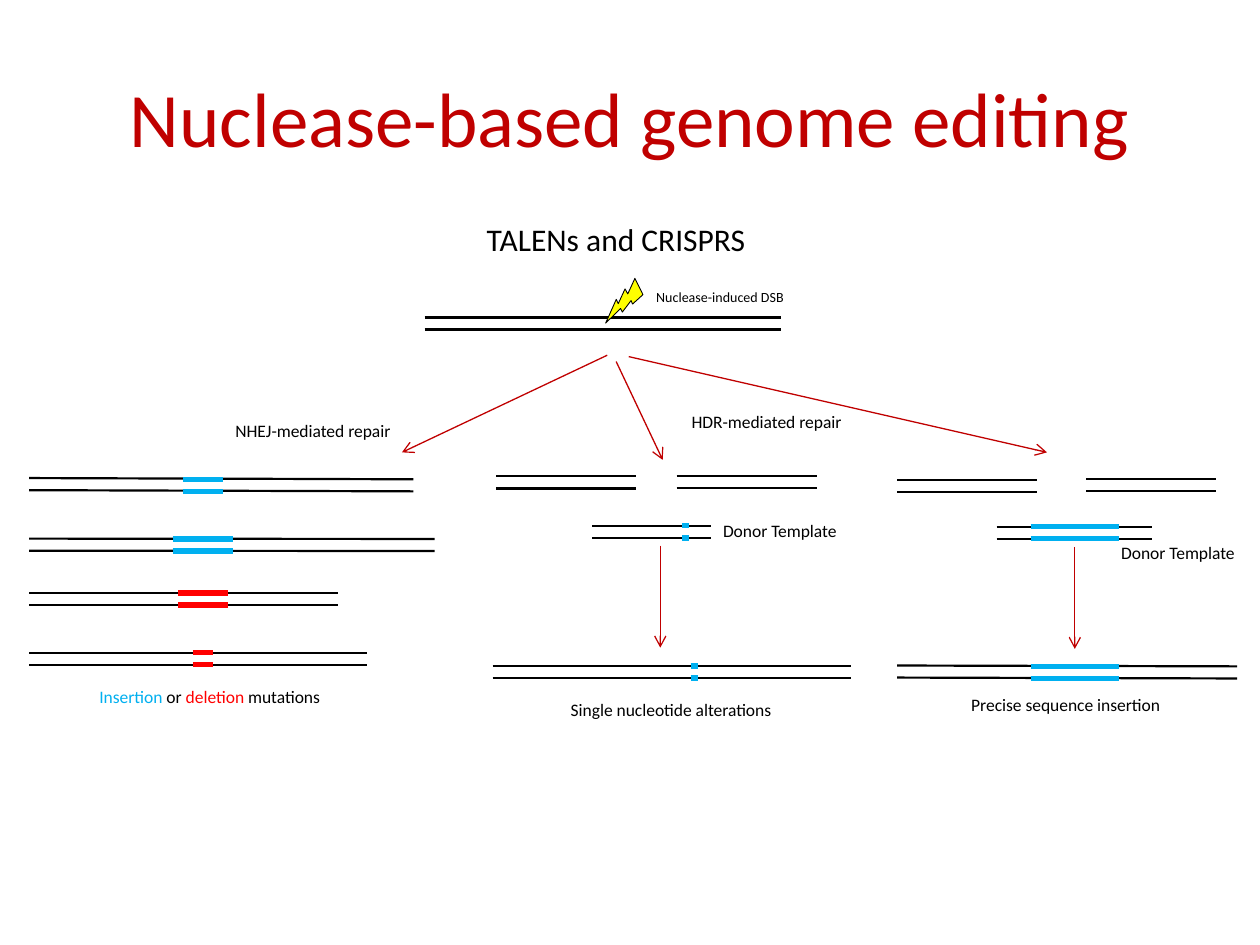
from lxml import etree
from pptx import Presentation
from pptx.dml.color import RGBColor
from pptx.enum.shapes import MSO_CONNECTOR, MSO_SHAPE
from pptx.enum.text import MSO_ANCHOR, PP_ALIGN
from pptx.oxml.ns import qn
from pptx.util import Pt

STRAIGHT = MSO_CONNECTOR.STRAIGHT
BOLT = MSO_SHAPE.LIGHTNING_BOLT
MIDDLE = MSO_ANCHOR.MIDDLE
CENTER = PP_ALIGN.CENTER

BLACK = RGBColor(0x00, 0x00, 0x00)
DARK_RED = RGBColor(0xC0, 0x00, 0x00)
RED = RGBColor(0xFF, 0x00, 0x00)
BLUE = RGBColor(0x00, 0xB0, 0xF0)
YELLOW = RGBColor(0xFF, 0xFF, 0x00)
FONT = "Calibri"
STRAND_GAP = 6.9

prs = Presentation()
prs.slide_width, prs.slide_height = Pt(720), Pt(540)
s = prs.slides.add_slide(prs.slide_layouts[5])


def add_line(x1, y1, x2, y2, color, width, arrow=False):
    c = s.shapes.add_connector(STRAIGHT, Pt(x1), Pt(y1), Pt(x2), Pt(y2))
    c.line.color.rgb = color
    c.line.width = Pt(width)
    if arrow:
        tail = etree.SubElement(c.line._get_or_add_ln(), qn("a:tailEnd"))
        tail.set("type", "arrow")
    etree.SubElement(c._element.spPr, qn("a:effectLst"))


def add_runs(p, runs, size):
    for text, color in runs:
        r = p.add_run()
        r.text = text
        r.font.name = FONT
        r.font.size = Pt(size)
        r.font.color.rgb = color


# Title
title = s.shapes.title
title.left, title.top, title.width, title.height = Pt(36), Pt(21.6), Pt(648), Pt(90)
title.text_frame.vertical_anchor = MIDDLE
p = title.text_frame.paragraphs[0]
p.alignment = CENTER
add_runs(p, [("Nuclease-based genome editing", DARK_RED)], 44)

# Double strands: left, right, top, drop at the right end, then the edited part
strands = [
    (242.6, 446.4, 181.4, 0, None),
    # NHEJ: insertions and deletions
    (16.6, 236.2, 273.2, 0.7, (104.4, 127.4, BLUE)),
    (16.6, 248.4, 307.8, 0.2, (98.6, 133.2, BLUE)),
    (16.6, 193, 338.8, 0, (101.9, 130.3, RED)),
    (16.6, 209.5, 373, 0, (110.2, 121.7, RED)),
    # HDR: single nucleotide
    (283.7, 363.6, 272.2, 0, None),
    (386.6, 466.6, 272, 0, None),
    (338.4, 406.1, 300.5, 0, (390, 393.9, BLUE)),
    (281.5, 486, 380.6, 0, (394.6, 398.9, BLUE)),
    # HDR: sequence insertion
    (512.6, 592.6, 274.1, 0, None),
    (620.6, 694.8, 273.8, 0, None),
    (569.5, 658.1, 301, 0, (589, 639.4, BLUE)),
    (512.6, 707, 380.3, 0.5, (589, 639.4, BLUE)),
]
for left, right, top, drop, edit in strands:
    for y in (top, top + STRAND_GAP):
        add_line(left, y, right, y + drop, BLACK, 1.25)
        if edit:
            start, end, color = edit
            add_line(start, y + drop, end, y + drop, color, 3)

# Double-strand break
sp = s.shapes.add_shape(BOLT, Pt(344.2), Pt(160.6), Pt(24.5), Pt(22.3))
sp.rotation = 86.4
sp.shadow.inherit = False
sp.fill.solid()
sp.fill.fore_color.rgb = YELLOW
sp.line.color.rgb = BLACK
sp.line.width = Pt(0.5)

# Repair pathway arrows
for x1, y1, x2, y2 in [
    (347, 203, 229.7, 258.5),
    (352.1, 206.6, 378.7, 262.8),
    (359.3, 203.8, 598.3, 258.5),
    (377.3, 311.8, 377.3, 370.1),
    (614.2, 312.5, 614.2, 370.8),
]:
    add_line(x1, y1, x2, y2, DARK_RED, 0.75, arrow=True)

# Labels: left, top, width, height, size, runs
labels = [
    (37.4, 122.4, 629.3, 28.8, 18, [("TALENs and CRISPRS", BLACK)]),
    (367.9, 161.3, 88.6, 17.3, 8, [("Nuclease-induced DSB", BLACK)]),
    (127.4, 236.2, 104.4, 19.4, 10, [("NHEJ-mediated repair", BLACK)]),
    (49.7, 388.4, 142.6, 19.4, 10, [
        ("Insertion", BLUE), (" or ", BLACK),
        ("deletion", RED), (" mutations", BLACK)]),
    (388.1, 231.1, 101.5, 19.4, 10, [("HDR-mediated repair", BLACK)]),
    (319, 396, 131, 19.4, 10, [("Single nucleotide alterations", BLACK)]),
    (406.1, 293.4, 81.4, 19.4, 10, [("Donor Template", BLACK)]),
    (633.6, 306, 81.4, 19.4, 10, [("Donor Template", BLACK)]),
    (547.9, 393.1, 123.8, 19.4, 10, [("Precise sequence insertion", BLACK)]),
]
for left, top, width, height, size, runs in labels:
    tf = s.shapes.add_textbox(Pt(left), Pt(top), Pt(width), Pt(height)).text_frame
    heading = size == 18
    tf.word_wrap = heading
    p = tf.paragraphs[0]
    if heading:
        p.alignment = CENTER
    add_runs(p, runs, size)

prs.save("out.pptx")
